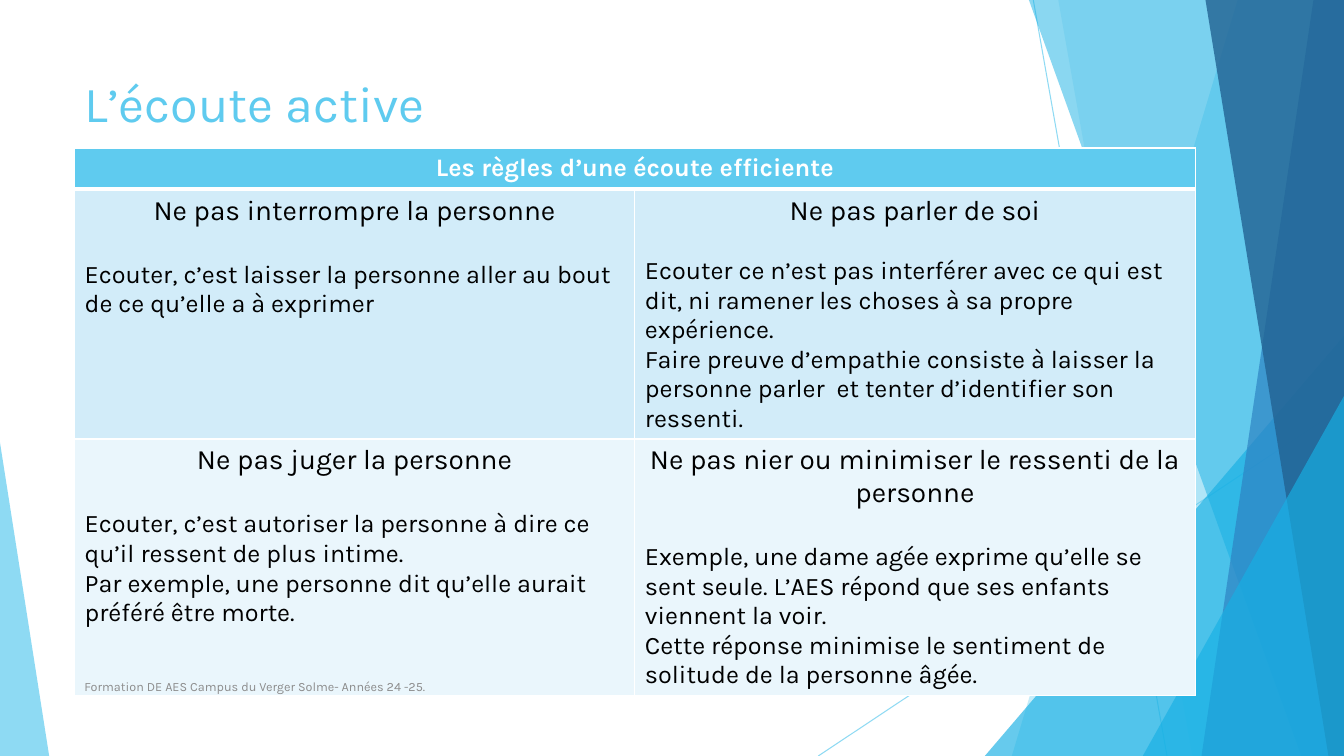
from dataclasses import dataclass

from lxml.etree import SubElement
from pptx import Presentation
from pptx.dml.color import RGBColor
from pptx.enum.shapes import MSO_CONNECTOR, MSO_SHAPE
from pptx.enum.text import MSO_ANCHOR as Anchor, PP_ALIGN as Align
from pptx.oxml import parse_xml
from pptx.oxml.ns import nsdecls, qn
from pptx.util import Cm, Pt


@dataclass(frozen=True)
class Theme:
    font: str = "Karla"
    sky: str = "5FCBEF"
    azure: str = "17B0E4"
    blue: str = "2E83C3"
    navy: str = "226292"
    row_dark: str = "D2ECF9"
    row_light: str = "EAF6FC"
    white: str = "FFFFFF"
    black: str = "000000"
    grey: str = "8C8C8C"
    title: int = 36
    heading: int = 20
    body: int = 18
    footer: int = 9


T = Theme()
WIDTH, HEIGHT = 33.87, 19.05
LEFT = 1.88

HEADER = "Les règles d’une écoute efficiente"
RULES = [
    [
        ("Ne pas interrompre la personne", 23.5,
         ["Ecouter, c’est laisser la personne aller au bout de ce qu’elle a à exprimer"]),
        ("Ne pas parler de soi", 21,
         ["Ecouter ce n’est pas interférer avec ce qui est dit, ni ramener les choses "
          "à sa propre expérience.",
          "Faire preuve d’empathie consiste à laisser la personne parler  et tenter "
          "d’identifier son ressenti."]),
    ],
    [
        ("Ne pas juger la personne", 23.5,
         ["Ecouter, c’est autoriser la personne à dire ce qu’il ressent de plus intime.",
          "Par exemple, une personne dit qu’elle aurait préféré être morte."]),
        ("Ne pas nier ou minimiser le ressenti de la personne", 23.5,
         ["Exemple, une dame agée exprime qu’elle se sent seule. L’AES répond que ses "
          "enfants viennent la voir.",
          "Cette réponse minimise le sentiment de solitude de la personne âgée."]),
    ],
]


def set_alpha(shape, percent):
    for color in shape.element.spPr.iter(qn("a:srgbClr")):
        SubElement(color, qn("a:alpha")).set("val", str(percent * 1000))


def paint(sp, color, alpha):
    sp.shadow.inherit = False
    sp.line.fill.background()
    sp.fill.solid()
    sp.fill.fore_color.rgb = RGBColor.from_string(color)
    set_alpha(sp, alpha)


def add_line(s, x1, y1, x2, y2):
    line = s.shapes.add_connector(MSO_CONNECTOR.STRAIGHT, Cm(x1), Cm(y1), Cm(x2), Cm(y2))
    line.line.width = Pt(0.75)
    line.line.color.rgb = RGBColor.from_string(T.sky)
    set_alpha(line, 70)
    SubElement(line.element.spPr, qn("a:effectLst"))


def add_band(s, top_x, bottom_x, color, alpha):
    builder = s.shapes.build_freeform(Cm(top_x), Cm(0))
    corners = [(WIDTH, 0), (WIDTH, HEIGHT), (bottom_x, HEIGHT)]
    builder.add_line_segments([(Cm(x), Cm(y)) for x, y in corners], close=True)
    paint(builder.convert_to_shape(), color, alpha)


def add_corner(s, left, top, width, apex, color, alpha):
    sp = s.shapes.add_shape(MSO_SHAPE.ISOSCELES_TRIANGLE,
                            Cm(left), Cm(top), Cm(width), Cm(HEIGHT - top))
    sp.adjustments[0] = apex
    paint(sp, color, alpha)


def write(p, text, *, size, color=T.black, bold=False, align=Align.LEFT, before=0):
    p.alignment = align
    p.space_before = Pt(before)
    r = p.add_run()
    r.text = text
    r.font.name = T.font
    r.font.size = Pt(size)
    r.font.bold = bold
    r.font.color.rgb = RGBColor.from_string(color)


def style_cell(cell, fill, top=1, bottom=1):
    cell.fill.solid()
    cell.fill.fore_color.rgb = RGBColor.from_string(fill)
    tcPr = cell._tc.get_or_add_tcPr()
    widths = {"lnL": 1, "lnR": 1, "lnT": top, "lnB": bottom}
    for i, (tag, width) in enumerate(widths.items()):
        tcPr.insert(i, parse_xml(
            f'<a:{tag} {nsdecls("a")} w="{Pt(width)}"><a:solidFill>'
            f'<a:srgbClr val="{T.white}"/></a:solidFill></a:{tag}>'))


def add_background(s):
    add_line(s, 26.04, 0, 29.41, HEIGHT)
    add_line(s, WIDTH, 10.24, 20.62, HEIGHT)
    add_band(s, 31.19, 25.5, T.sky, 36)
    add_band(s, 26.67, 30.05, T.sky, 20)
    add_corner(s, 24.82, 8.46, 9.05, 1, T.azure, 66)
    add_band(s, 25.93, 32.79, T.azure, 50)
    add_band(s, 33.1, 30.28, T.blue, 70)
    add_band(s, 30.38, 33.48, T.navy, 80)
    add_corner(s, 28.8, 9.98, 5.07, 1, T.azure, 66)
    add_corner(s, 0, 11.15, 1.24, 0, T.sky, 70)


def add_title(s, text):
    sp = s.shapes.title
    sp.left, sp.top, sp.width, sp.height = Cm(LEFT), Cm(1.7), Cm(23.88), Cm(3.66)
    tf = sp.text_frame
    tf.vertical_anchor = Anchor.TOP
    write(tf.paragraphs[0], text, size=T.title, color=T.sky)


def add_rules(s):
    heights = [1.04, 6.27, 6.46]
    frame = s.shapes.add_table(3, 2, Cm(LEFT), Cm(3.73), Cm(28.24), Cm(sum(heights)))
    table = frame.table
    for row, height in zip(table.rows, heights):
        row.height = Cm(height)
    for cell in table.rows[0].cells:
        style_cell(cell, T.sky, bottom=3)
    table.cell(0, 0).merge(table.cell(0, 1))
    write(table.cell(0, 0).text_frame.paragraphs[0], HEADER,
          size=T.body, color=T.white, bold=True, align=Align.CENTER)
    for i, (rules, fill) in enumerate(zip(RULES, (T.row_dark, T.row_light)), 1):
        for j, (heading, gap, lines) in enumerate(rules):
            cell = table.cell(i, j)
            style_cell(cell, fill, top=3 if i == 1 else 1)
            tf = cell.text_frame
            write(tf.paragraphs[0], heading, size=T.heading, align=Align.CENTER)
            for k, text in enumerate(lines):
                write(tf.add_paragraph(), text, size=T.body, before=0 if k else gap)


def add_footer(s, text):
    tf = s.shapes.add_textbox(Cm(LEFT), Cm(16.79), Cm(17.5), Cm(1.02)).text_frame
    tf.word_wrap = True
    tf.vertical_anchor = Anchor.MIDDLE
    write(tf.paragraphs[0], text, size=T.footer, color=T.grey)


def main():
    prs = Presentation()
    prs.slide_width, prs.slide_height = Cm(WIDTH), Cm(HEIGHT)
    s = prs.slides.add_slide(prs.slide_layouts[5])
    add_background(s)
    add_title(s, "L’écoute active")
    add_rules(s)
    add_footer(s, "Formation DE AES Campus du Verger Solme- Années 24 -25.")
    prs.save("out.pptx")


if __name__ == "__main__":
    main()
